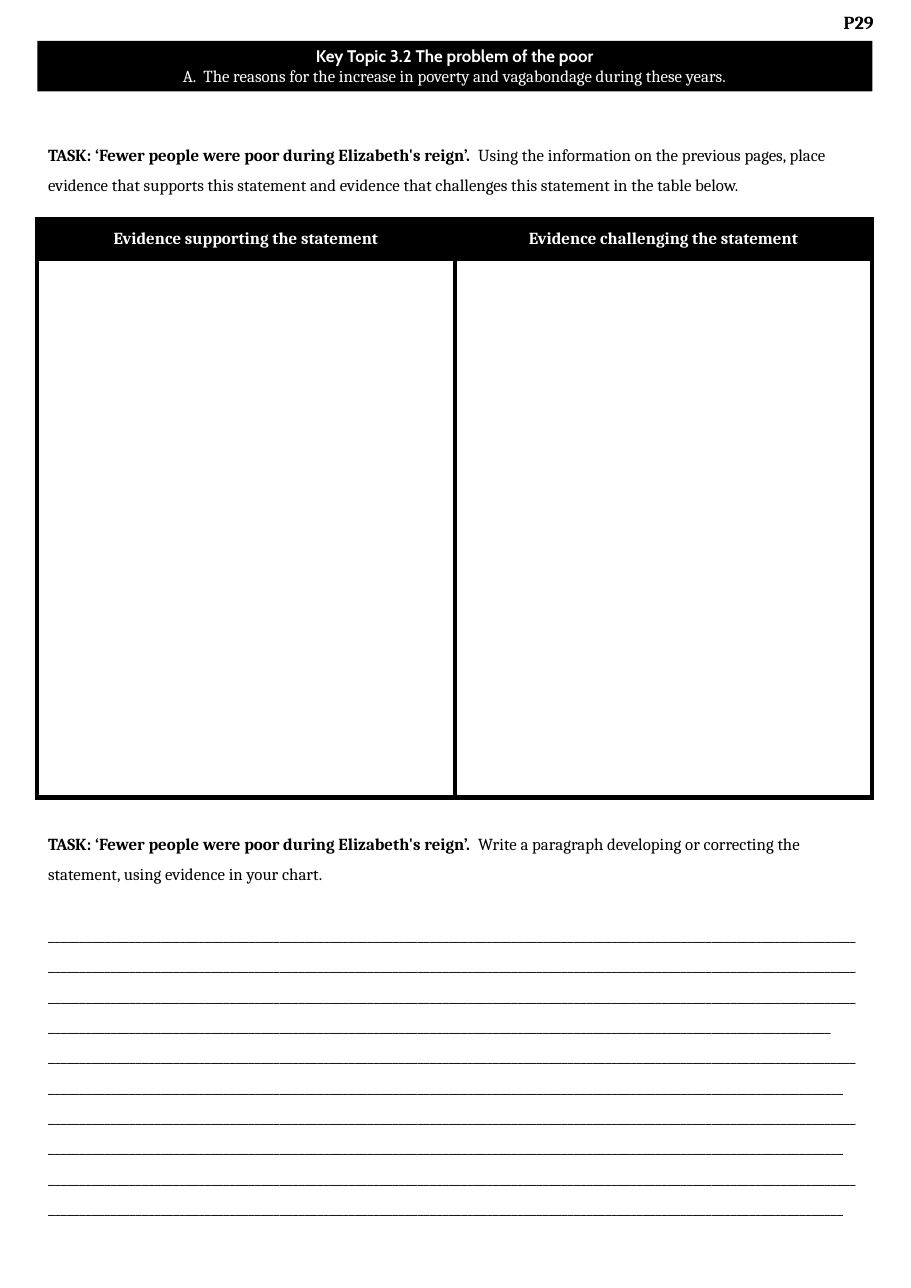
from lxml import etree
from pptx import Presentation
from pptx.dml.color import RGBColor
from pptx.enum.text import MSO_ANCHOR, MSO_AUTO_SIZE, PP_ALIGN
from pptx.oxml.ns import qn
from pptx.util import Cm, Pt

BLACK = RGBColor(0, 0, 0)
WHITE = RGBColor(255, 255, 255)
CENTER = PP_ALIGN.CENTER
MIDDLE = MSO_ANCHOR.MIDDLE
NO_AUTOFIT = MSO_AUTO_SIZE.NONE
LEFT, WIDTH = Cm(0.86), Cm(19.25)
INSET = Cm(0.25)
STATEMENT = "TASK: ‘Fewer people were poor during Elizabeth's reign’.  "


def style(p, color=BLACK, bold=False, size=11, name="Cambria"):
    p.font.name = name
    p.font.size = Pt(size)
    p.font.bold = bold
    p.font.color.rgb = color


def add_task(s, top, height, instruction):
    """Add a box with the bold statement and its instruction; return its text frame."""
    tf = s.shapes.add_textbox(LEFT, top, WIDTH, height).text_frame
    tf.word_wrap = True
    p = tf.paragraphs[0]
    p.line_spacing = 1.5
    style(p)
    for text, bold in ((STATEMENT, True), (instruction, False)):
        r = p.add_run()
        r.text = text
        r.font.bold = bold
    return tf


prs = Presentation()
prs.slide_width, prs.slide_height = Cm(21), Cm(29.7)
s = prs.slides.add_slide(prs.slide_layouts[5])

# Heading bar
title = s.shapes.title
title.left, title.top, title.width, title.height = LEFT, Cm(0.94), WIDTH, Cm(1.17)
title.fill.solid()
title.fill.fore_color.rgb = BLACK
tf = title.text_frame
tf.auto_size = NO_AUTOFIT
tf.vertical_anchor = MIDDLE
tf.margin_left = tf.margin_right = tf.margin_top = tf.margin_bottom = INSET
tf.text = ("Key Topic 3.2 The problem of the poor\n"
           "A.  The reasons for the increase in poverty and vagabondage during these years.")
for p, name, bold in zip(tf.paragraphs, ("Cabin", "Cambria"), (True, False)):
    p.alignment = CENTER
    style(p, WHITE, bold, name=name)

# Page number
tf = s.shapes.add_textbox(Cm(19.02), 0, Cm(1.55), Cm(2.26)).text_frame
tf.word_wrap = True
tf.margin_left = tf.margin_right = tf.margin_top = tf.margin_bottom = INSET
p = tf.paragraphs[0]
p.text = "P29"
p.alignment = CENTER
style(p, bold=True, size=12)

# Evidence task and table
add_task(s, Cm(2.97), Cm(1.57),
         "Using the information on the previous pages, place evidence that supports "
         "this statement and evidence that challenges this statement in the table below.")

table = s.shapes.add_table(2, 2, LEFT, Cm(5.05), WIDTH, Cm(13.34)).table
table.rows[0].height, table.rows[1].height = Cm(0.92), Cm(12.42)
for cell in table.iter_cells():
    tcPr = cell._tc.get_or_add_tcPr()
    for side in ("a:lnL", "a:lnR", "a:lnT", "a:lnB"):
        ln = etree.SubElement(tcPr, qn(side), w=str(Pt(3)))
        fill = etree.SubElement(ln, qn("a:solidFill"))
        etree.SubElement(fill, qn("a:srgbClr"), val=str(BLACK))
    cell.fill.background()

for cell, kind in zip(table.rows[0].cells, ("supporting", "challenging")):
    cell.fill.solid()
    cell.fill.fore_color.rgb = BLACK
    cell.vertical_anchor = MIDDLE
    p = cell.text_frame.paragraphs[0]
    p.text = f"Evidence {kind} the statement"
    p.alignment = CENTER
    style(p, WHITE, True)

# Writing task and its answer lines
tf = add_task(s, Cm(18.87), Cm(9.35),
              "Write a paragraph developing or correcting the statement, "
              "using evidence in your chart.")
for i, length in enumerate((512, 256, 256, 256)):
    p = tf.add_paragraph()
    p.text = "_" * length
    p.line_spacing = 1.5
    if i == 0:
        p.space_before = Pt(19.75)
    style(p)

prs.save("out.pptx")
